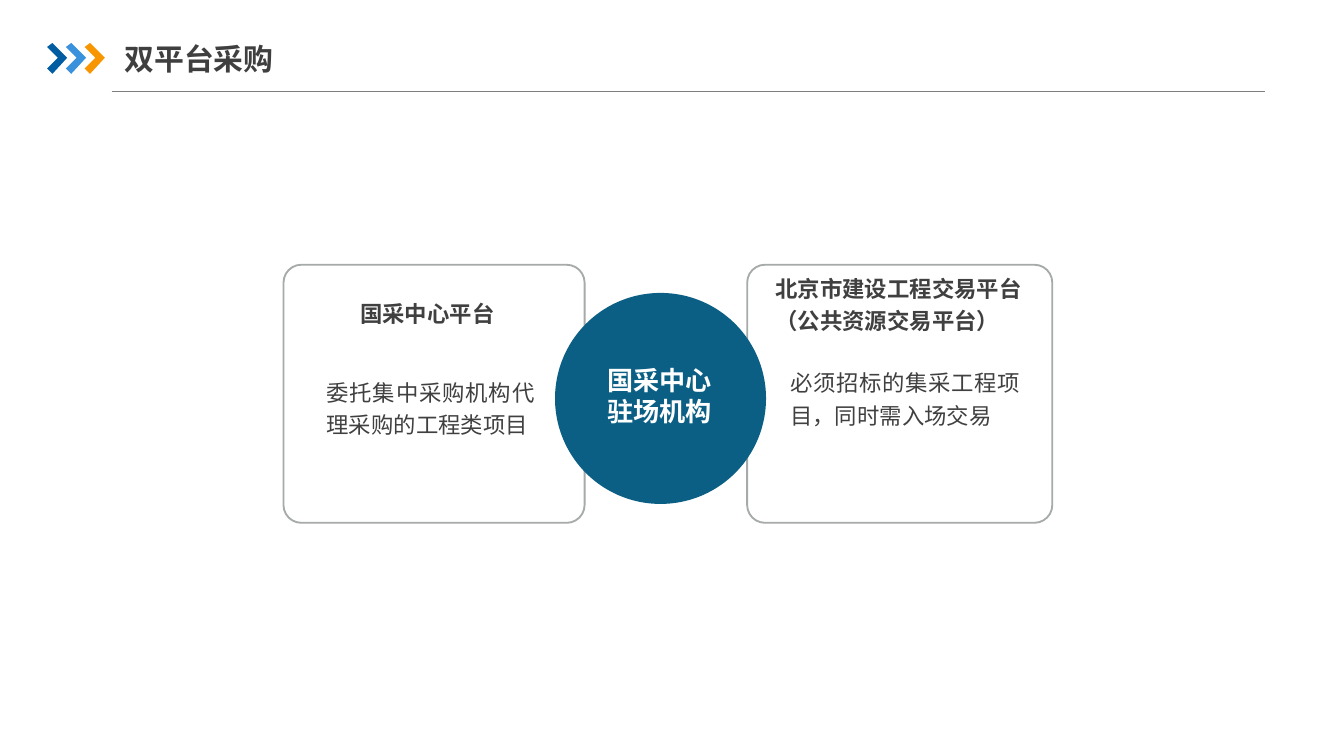
from typing import NamedTuple

from lxml import etree
from pptx import Presentation
from pptx.dml.color import RGBColor
from pptx.enum.shapes import MSO_CONNECTOR, MSO_SHAPE
from pptx.enum.text import MSO_ANCHOR, PP_ALIGN
from pptx.oxml.ns import qn
from pptx.util import Inches, Pt

ROUND, OVAL = MSO_SHAPE.ROUNDED_RECTANGLE, MSO_SHAPE.OVAL
LINE = MSO_CONNECTOR.STRAIGHT
TOP, MIDDLE = MSO_ANCHOR.TOP, MSO_ANCHOR.MIDDLE
LEFT, CENTER, JUSTIFY = PP_ALIGN.LEFT, PP_ALIGN.CENTER, PP_ALIGN.JUSTIFY

WIDTH = 10
HEIGHT = WIDTH * 9 / 16
FONT = "Noto Sans CJK SC"
COLORS = {
    "title": "3F3F3F", "text": "404040", "white": "FFFFFF",
    "border": "A6AAA9", "rule": "7F7F7F", "circle": "0B5F84",
    "navy": "005DA2", "blue": "3992DB", "orange": "F79600",
}


class Box(NamedTuple):
    left: float
    top: float
    width: float
    height: float

    def lengths(self) -> list:
        return [Inches(n) for n in self]


class Style(NamedTuple):
    size: int
    color: str
    bold: bool
    align: int
    anchor: int
    spacing: float = 1.2
    before: int = 0
    inset: tuple = (0, 0)


class Label(NamedTuple):
    box: Box
    style: Style
    lines: tuple


TITLE = Style(16, "title", True, JUSTIFY, TOP, inset=(0.1, 0.05))
HEAD = Style(12, "text", True, LEFT, MIDDLE)
BODY = Style(12, "text", False, JUSTIFY, TOP, before=25)
HUB = Style(14, "white", True, CENTER, MIDDLE, spacing=1.0, before=10)

CARDS = (Box(2.11, 1.97, 2.24, 1.92), Box(5.56, 1.97, 2.27, 1.92))
CIRCLE = Box(4.13, 2.18, 1.57, 1.57)
LABELS = (
    Label(Box(2.68, 2.19, 1.15, 0.25), HEAD, ("国采中心平台",)),
    Label(Box(5.77, 2.12, 2.13, 0.25), HEAD,
          ("北京市建设工程交易平台", "（公共资源交易平台）")),
    Label(Box(4.44, 2.75, 0.94, 0.39), HUB, ("国采中心驻场机构",)),
    Label(Box(2.43, 2.78, 1.55, 0.84), BODY, ("委托集中采购机构代理采购的工程类项目",)),
    Label(Box(5.88, 2.71, 1.71, 0.82), BODY, ("必须招标的集采工程项目，同时需入场交易",)),
    Label(Box(0.83, 0.2, 8.3, 0.42), TITLE, ("双平台采购",)),
)
ARROW = ((0, 0.03), (0.04, 0), (0.15, 0.11), (0.04, 0.23), (0, 0.19), (0.08, 0.11))


def rgb(name: str) -> RGBColor:
    return RGBColor.from_string(COLORS[name])


def apply(target, values: dict) -> None:
    for name, value in values.items():
        setattr(target, name, value)


def paint(shape, color: str) -> None:
    """Give a shape a plain fill with no outline or shadow."""
    shape.shadow.inherit = False
    shape.fill.solid()
    shape.fill.fore_color.rgb = rgb(color)
    shape.line.fill.background()


def add_card(shapes, box: Box) -> None:
    card = shapes.add_shape(ROUND, *box.lengths())
    card.adjustments[0] = 0.069
    card.shadow.inherit = False
    card.fill.background()
    card.line.color.rgb = rgb("border")
    card.line.width = Pt(1)


def add_label(shapes, label: Label) -> None:
    style = label.style
    frame = shapes.add_textbox(*label.box.lengths()).text_frame
    side, edge = (Inches(n) for n in style.inset)
    apply(frame, {
        "word_wrap": True, "vertical_anchor": style.anchor,
        "margin_left": side, "margin_right": side,
        "margin_top": edge, "margin_bottom": edge,
    })
    frame.text = "\n".join(label.lines)
    for para in frame.paragraphs:
        apply(para, {
            "alignment": style.align, "line_spacing": style.spacing,
            "space_before": Pt(style.before),
        })
        font = para.runs[0].font
        apply(font, {"name": FONT, "size": Pt(style.size), "bold": style.bold})
        font.color.rgb = rgb(style.color)
        props = para.runs[0]._r.get_or_add_rPr()
        etree.SubElement(props, qn("a:ea"), typeface=FONT)


def add_arrow(shapes, left: float, top: float, color: str) -> None:
    points = [(Inches(left + x), Inches(top + y)) for x, y in ARROW]
    pen = shapes.build_freeform(*points[0])
    pen.add_line_segments(points[1:], close=True)
    paint(pen.convert_to_shape(), color)


def add_rule(shapes) -> None:
    ends = [Inches(n) for n in (0.83, 0.68, 9.41, 0.68)]
    rule = shapes.add_connector(LINE, *ends)
    rule.line.color.rgb = rgb("rule")
    rule.line.width = Pt(0.75)
    etree.SubElement(rule._element.spPr, qn("a:effectLst"))


def main() -> None:
    deck = Presentation()
    apply(deck, {"slide_width": Inches(WIDTH), "slide_height": Inches(HEIGHT)})
    shapes = deck.slides.add_slide(deck.slide_layouts[6]).shapes

    for card in CARDS:
        add_card(shapes, card)
    paint(shapes.add_shape(OVAL, *CIRCLE.lengths()), "circle")
    add_rule(shapes)
    for i, color in enumerate(("navy", "blue", "orange")):
        add_arrow(shapes, 0.35 + 0.14 * i, 0.32, color)
    for label in LABELS:
        add_label(shapes, label)
    deck.save("out.pptx")


if __name__ == "__main__":
    main()
